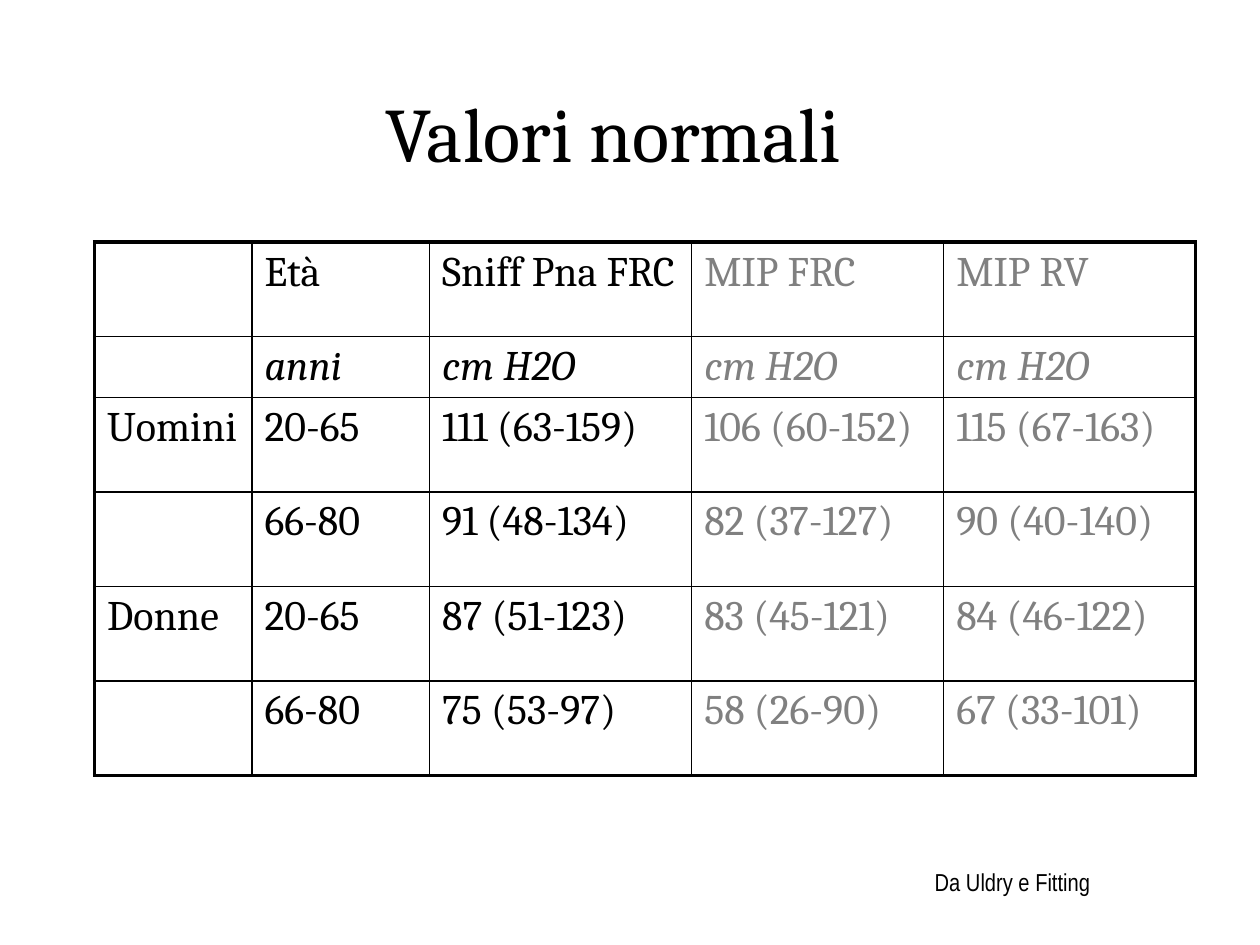
import pptx
import pptx.dml.color
import pptx.enum.text
import pptx.oxml
import pptx.oxml.ns
import pptx.util
from pptx.util import Inches

BLACK, GREY = "000000", "808080"
THIN, THICK = 1, 2.25

TITLE = "Valori normali"
SOURCE = "Da Uldry e Fitting"
ROWS = [
    ["", "Età", "Sniff Pna FRC", "MIP FRC", "MIP RV"],
    ["", "anni", "cm H2O", "cm H2O", "cm H2O"],
    ["Uomini", "20-65", "111 (63-159)", "106 (60-152)", "115 (67-163)"],
    ["", "66-80", "91 (48-134)", "82 (37-127)", "90 (40-140)"],
    ["Donne", "20-65", "87 (51-123)", "83 (45-121)", "84 (46-122)"],
    ["", "66-80", "75 (53-97)", "58 (26-90)", "67 (33-101)"],
]
COLUMN_WIDTHS = [1.25, 1.41, 2.08, 2, 2]
ROW_HEIGHTS = [0.75, 0.4, 0.75, 0.75, 0.75, 0.75]
COLUMN_COLORS = [BLACK, BLACK, BLACK, GREY, GREY]
UNIT_ROW = 1


def style(font, name, size, color, italic=False):
    font.name = name
    font.size = pptx.util.Pt(size)
    font.italic = italic
    font.color.rgb = pptx.dml.color.RGBColor.from_string(color)


def set_borders(cell, widths):
    """Draw black borders; widths are points for left, right, top, bottom."""
    properties = cell._tc.get_or_add_tcPr()
    for position, (side, width) in enumerate(zip("LRTB", widths)):
        line = pptx.oxml.parse_xml(
            f'<a:ln{side} {pptx.oxml.ns.nsdecls("a")} w="{pptx.util.Pt(width)}">'
            f'<a:solidFill><a:srgbClr val="{BLACK}"/></a:solidFill></a:ln{side}>'
        )
        properties.insert(position, line)


def add_values_table(page):
    frame = page.shapes.add_table(
        len(ROWS), len(COLUMN_WIDTHS), Inches(0.75), Inches(1.92),
        Inches(sum(COLUMN_WIDTHS)), Inches(sum(ROW_HEIGHTS)),
    )
    table = frame.table
    table.first_row = table.horz_banding = False
    for column, width in zip(table.columns, COLUMN_WIDTHS):
        column.width = Inches(width)
    for row, height in zip(table.rows, ROW_HEIGHTS):
        row.height = Inches(height)

    last_row, last_column = len(ROWS) - 1, len(COLUMN_WIDTHS) - 1
    for r, texts in enumerate(ROWS):
        for c, text in enumerate(texts):
            cell = table.cell(r, c)
            cell.fill.background()
            outer_sides = (c == 0, c == last_column, r == 0, r == last_row)
            set_borders(cell, [THICK if outer else THIN for outer in outer_sides])
            cell.text_frame.text = text
            for span in cell.text_frame.paragraphs[0].runs:
                style(span.font, "Cambria", 24, COLUMN_COLORS[c], r == UNIT_ROW)


deck = pptx.Presentation()
deck.slide_width, deck.slide_height = Inches(10), Inches(7.5)
page = deck.slides.add_slide(deck.slide_layouts[5])

title = page.shapes.title
title.left, title.top = Inches(1.58), Inches(0.17)
title.width, title.height = Inches(6.58), Inches(1.75)
title.text_frame.text = TITLE
title.text_frame.auto_size = pptx.enum.text.MSO_AUTO_SIZE.NONE
title.text_frame.vertical_anchor = pptx.enum.text.MSO_ANCHOR.MIDDLE
heading = title.text_frame.paragraphs[0]
heading.alignment = pptx.enum.text.PP_ALIGN.CENTER
style(heading.runs[0].font, "Cambria", 44, BLACK)

add_values_table(page)

box = page.shapes.add_textbox(Inches(7.32), Inches(6.83), Inches(2.43), Inches(0.34))
box.text_frame.word_wrap = True
box.text_frame.auto_size = pptx.enum.text.MSO_AUTO_SIZE.SHAPE_TO_FIT_TEXT
box.text_frame.text = SOURCE
style(box.text_frame.paragraphs[0].runs[0].font, "Arial Narrow", 14, BLACK)

deck.save("out.pptx")
